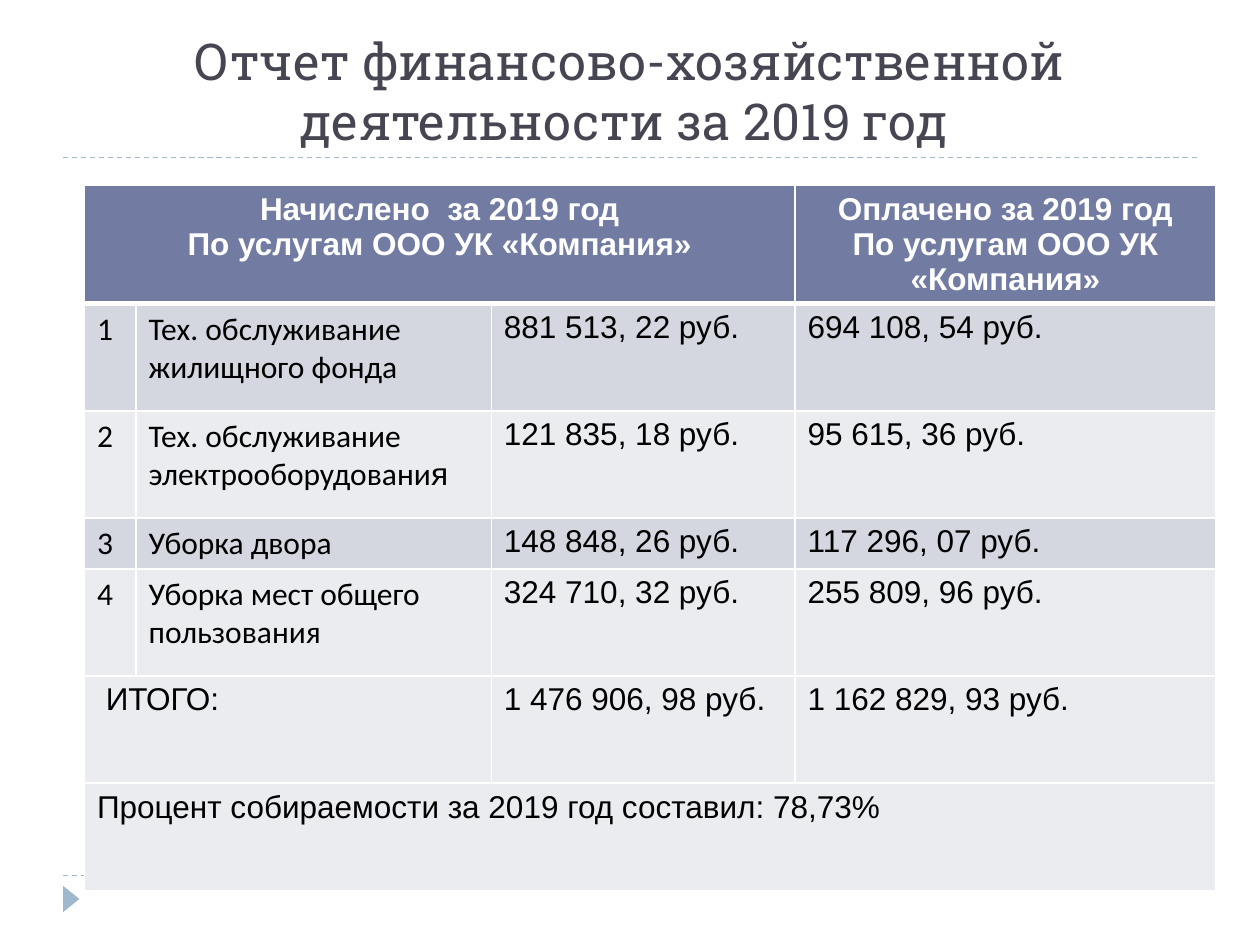
from dataclasses import dataclass

from lxml.etree import SubElement
from pptx import Presentation
from pptx.dml.color import RGBColor
from pptx.enum.dml import MSO_LINE
from pptx.enum.shapes import MSO_CONNECTOR, MSO_SHAPE
from pptx.enum.text import MSO_ANCHOR, MSO_AUTO_SIZE, PP_ALIGN
from pptx.oxml import parse_xml
from pptx.oxml.ns import nsdecls, qn
from pptx.util import Inches, Pt


@dataclass(frozen=True)
class Theme:
    accent: str = "9FB8CD"
    title: str = "464653"
    header: str = "727CA3"
    band_dark: str = "D5D7E0"
    band_light: str = "EBECF0"
    white: str = "FFFFFF"
    black: str = "000000"
    title_font: str = "Roboto Slab"
    label_font: str = "Calibri"
    value_font: str = "Arial"
    title_size: int = 29
    table_size: int = 18


def rgb(color):
    return RGBColor.from_string(color)


def add_text(para, text, *, font, size, color, bold=False):
    span = para.add_run()
    span.text = text
    span.font.name = font
    span.font.size = Pt(size)
    span.font.color.rgb = rgb(color)
    span.font.bold = bold


class ReportSlide:
    def __init__(self, deck, theme):
        self.theme = theme
        self.page = deck.slides.add_slide(deck.slide_layouts[5])

    def rule(self, top):
        line = self.page.shapes.add_connector(
            MSO_CONNECTOR.STRAIGHT, Inches(0.5), Inches(top), Inches(9.5), Inches(top))
        line.line.color.rgb = rgb(self.theme.accent)
        line.line.width = Pt(0.75)
        line.line.dash_style = MSO_LINE.DASH
        SubElement(line._element.spPr, qn("a:effectLst"))

    def marker(self, left, top, width, height):
        shape = self.page.shapes.add_shape(
            MSO_SHAPE.ISOSCELES_TRIANGLE, *map(Inches, (left, top, width, height)))
        shape.rotation = 90
        shape.shadow.inherit = False
        shape.fill.solid()
        shape.fill.fore_color.rgb = rgb(self.theme.accent)
        shape.line.fill.background()

    def title(self, parts):
        """Fill the title from (text, font) pairs."""
        box = self.page.shapes.title
        box.left, box.top, box.width, box.height = map(Inches, (0.5, 0.25, 9, 1))
        frame = box.text_frame
        frame.auto_size = MSO_AUTO_SIZE.NONE
        frame.vertical_anchor = MSO_ANCHOR.BOTTOM
        para = frame.paragraphs[0]
        para.alignment = PP_ALIGN.CENTER
        for text, font in parts:
            add_text(para, text, font=font, size=self.theme.title_size,
                     color=self.theme.title)

    def table(self, left, top, widths, heights):
        grid = self.page.shapes.add_table(
            len(heights), len(widths), Inches(left), Inches(top),
            Inches(sum(widths)), Inches(sum(heights))).table
        grid.first_row = grid.horz_banding = False
        for column, width in zip(grid.columns, widths):
            column.width = Inches(width)
        for row, height in zip(grid.rows, heights):
            row.height = Inches(height)
        return grid

    def borders(self, cell, top=1, bottom=1):
        sides = {"L": 1, "R": 1, "T": top, "B": bottom}
        for position, (side, width) in enumerate(sides.items()):
            cell._tc.get_or_add_tcPr().insert(position, parse_xml(
                f'<a:ln{side} {nsdecls("a")} w="{Pt(width)}"><a:solidFill>'
                f'<a:srgbClr val="{self.theme.white}"/></a:solidFill></a:ln{side}>'))

    def cell(self, cell, paragraphs, align=PP_ALIGN.LEFT, **text_format):
        """Write paragraphs, each a list of (text, font) pairs."""
        frame = cell.text_frame
        for index, parts in enumerate(paragraphs):
            para = frame.add_paragraph() if index else frame.paragraphs[0]
            para.alignment = align
            for text, font in parts:
                add_text(para, text, font=font, size=self.theme.table_size, **text_format)


def fill_table(slide, grid, services, totals, summary):
    theme = slide.theme
    label, value = theme.label_font, theme.value_font
    fills = [theme.header, theme.band_dark, theme.band_light, theme.band_dark]
    for row_index, row in enumerate(grid.rows):
        for cell in row.cells:
            slide.borders(cell, top=3 if row_index == 1 else 1,
                          bottom=3 if row_index == 0 else 1)
            cell.fill.solid()
            color = fills[row_index] if row_index < len(fills) else theme.band_light
            cell.fill.fore_color.rgb = rgb(color)

    for row, first, last in ((0, 0, 2), (5, 0, 1), (6, 0, 3)):
        grid.cell(row, first).merge(grid.cell(row, last))

    company = "По услугам ООО УК «Компания»"
    for column, heading in ((0, "Начислено  за 2019 год"), (3, "Оплачено за 2019 год")):
        slide.cell(grid.cell(0, column), [[(heading, value)], [(company, value)]],
                   align=PP_ALIGN.CENTER, color=theme.white, bold=True)

    for number, (name_parts, charged, paid) in enumerate(services, start=1):
        contents = ([(str(number), label)], name_parts, [(charged, value)], [(paid, value)])
        for column, parts in enumerate(contents):
            slide.cell(grid.cell(number, column), [parts], color=theme.black)

    for column, text in zip((0, 2, 3), totals):
        slide.cell(grid.cell(5, column), [[(text, value)]], color=theme.black)
    slide.cell(grid.cell(6, 0), [[(summary, value)]], color=theme.black)


def main():
    deck = Presentation()
    deck.slide_width, deck.slide_height = Inches(10), Inches(7.5)
    theme = Theme()
    label, value = theme.label_font, theme.value_font
    slide = ReportSlide(deck, theme)

    for top in (6.95, 1.25):
        slide.rule(top)
    slide.marker(0.46, 7.07, 0.21, 0.13)
    slide.title([
        ("Отчет финансово-хозяйственной деятельности за 201", theme.title_font),
        ("9", value),
        (" год ", theme.title_font),
    ])

    services = [
        ([("Тех. обслуживание жилищного фонда", label)],
         "881 513, 22 руб.", "694 108, 54 руб."),
        ([("Тех. обслуживание электрооборудовани", label), ("я", value)],
         "121 835, 18 руб.", "95 615, 36 руб."),
        ([("Уборка двора", label)], "148 848, 26 руб.", "117 296, 07 руб."),
        ([("Уборка мест общего пользования", label)],
         "324 710, 32 руб.", "255 809, 96 руб."),
    ]
    grid = slide.table(0.67, 1.47, widths=(0.41, 2.82, 2.41, 3.34),
                       heights=(0.59, 0.85, 0.85, 0.37, 0.85, 0.85, 0.85))
    fill_table(slide, grid, services,
               totals=(" ИТОГО:", "1 476 906, 98 руб.", "1 162 829, 93 руб."),
               summary="Процент собираемости за 2019 год составил: 78,73%")
    deck.save("out.pptx")


if __name__ == "__main__":
    main()
